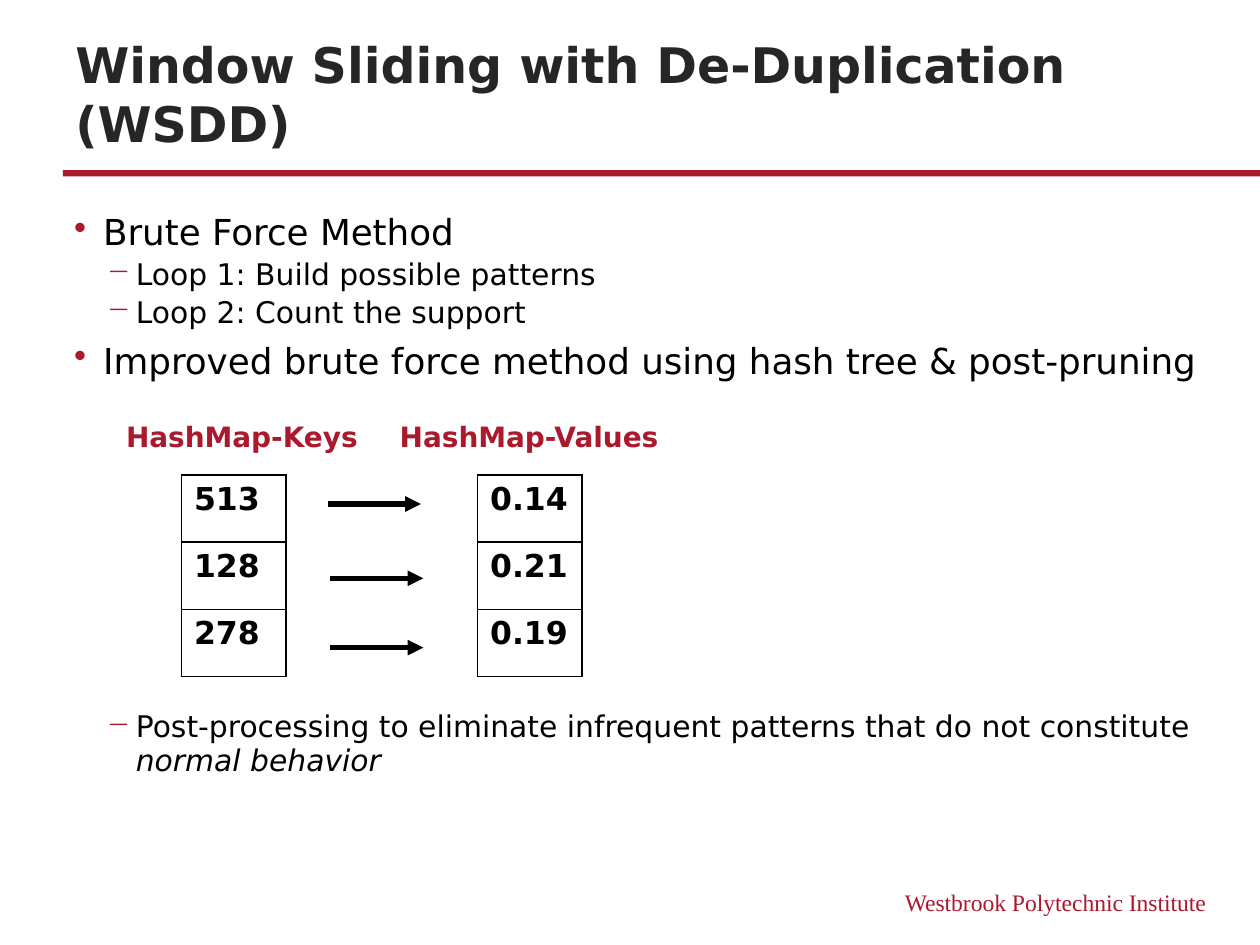
from dataclasses import dataclass

from lxml import etree
from pptx import Presentation
from pptx.dml.color import RGBColor
from pptx.enum import shapes, text
from pptx.oxml.ns import qn
from pptx.util import Inches, Pt

COLORS = {"red": "AB192D", "title": "262626", "black": "000000"}
SANS, SERIF = "DejaVu Sans", "Times New Roman"
ROW_H = 1.6 / 3


@dataclass
class Bullet:
    words: str
    level: int = 0
    spacing: float = 0.85
    italic_end: str = ""


@dataclass
class Column:
    heading: str
    heading_x: float
    table_x: float
    values: tuple[str, ...]


@dataclass
class Arrow:
    x: float
    y: float


BULLETS = [
    Bullet("Brute Force Method"),
    Bullet("Loop 1: Build possible patterns", 1),
    Bullet("Loop 2: Count the support", 1),
    Bullet("Improved brute force method using hash tree & post-pruning"),
]
CLOSING = [
    Bullet("Post-processing to eliminate infrequent patterns that do not constitute ",
           1, 0.95, "normal behavior"),
]
COLUMNS = [
    Column("HashMap-Keys", 0.78, 1.44, ("513", "128", "278")),
    Column("HashMap-Values", 3.06, 3.79, ("0.14", "0.21", "0.19")),
]
ARROWS = [Arrow(2.6, 4), Arrow(2.62, 4.59), Arrow(2.62, 5.14)]


def rgb(name: str) -> RGBColor:
    return RGBColor.from_string(COLORS[name])


def sub(parent, tag: str, **attrs: str):
    return etree.SubElement(parent, qn(tag), attrs)


def style(p, size: float, color: str = "black", bold: bool = False, font: str = SANS) -> None:
    p.font.size, p.font.bold, p.font.name = Pt(size), bold, font
    p.font.color.rgb = rgb(color)


def add_box(s, x: float, y: float, w: float, h: float):
    tf = s.shapes.add_textbox(Inches(x), Inches(y), Inches(w), Inches(h)).text_frame
    tf.word_wrap = True
    return tf


def add_line_of_text(s, box: tuple, words: str, size: float, color: str, align,
                     bold: bool = True, font: str = SANS):
    tf = add_box(s, *box)
    p = tf.paragraphs[0]
    p.text, p.alignment = words, align
    style(p, size, color, bold, font)
    return tf


def add_bullets(s, y: float, h: float, bullets: list[Bullet]) -> None:
    tf = add_box(s, 0.49, y, 9.16, h)
    for i, b in enumerate(bullets):
        p = tf.add_paragraph() if i else tf.paragraphs[0]
        p.level, p.line_spacing = b.level, b.spacing
        p.space_before = Pt(4.5 if b.level else 9)
        p.add_run().text = b.words
        if b.italic_end:
            r = p.add_run()
            r.text, r.font.italic = b.italic_end, True
        # Hanging indent and red bullet
        pPr = p._p.get_or_add_pPr()
        pPr.set("marL", str(Inches(0.49 if b.level else 0.23)))
        pPr.set("indent", str(Inches(-0.23)))
        sub(sub(pPr, "a:buClr"), "a:srgbClr", val=COLORS["red"])
        sub(pPr, "a:buChar", char="─" if b.level else "•")
        style(p, 17 if b.level else 20.4)


def add_column(s, col: Column) -> None:
    add_line_of_text(s, (col.heading_x, 3.28, 2.28, 0.7), col.heading, 16, "red",
                     text.PP_ALIGN.CENTER)
    tbl = s.shapes.add_table(len(col.values), 1, Inches(col.table_x), Inches(3.77),
                             Inches(0.83), Inches(ROW_H * len(col.values))).table
    tbl.first_row = tbl.horz_banding = False
    for i, value in enumerate(col.values):
        cell = tbl.cell(i, 0)
        cell.text = value
        style(cell.text_frame.paragraphs[0], 18, bold=True)
        tcPr = cell._tc.get_or_add_tcPr()
        for side in ("a:lnL", "a:lnR", "a:lnT", "a:lnB"):
            ln = sub(tcPr, side, w=str(Pt(1)))
            sub(sub(ln, "a:solidFill"), "a:srgbClr", val=COLORS["black"])
        cell.fill.background()


def add_arrow(s, a: Arrow) -> None:
    c = s.shapes.add_connector(shapes.MSO_CONNECTOR.STRAIGHT, Inches(a.x), Inches(a.y),
                               Inches(a.x + 0.74), Inches(a.y))
    c.line.width = Pt(3)
    c.line.color.rgb = rgb("black")
    sub(c.line._get_or_add_ln(), "a:tailEnd", type="triangle")
    sub(c._element.spPr, "a:effectLst")


def main() -> None:
    prs = Presentation()
    prs.slide_width, prs.slide_height = Inches(10), Inches(7.5)
    s = prs.slides.add_slide(prs.slide_layouts[6])

    # Rule under the title
    sp = s.shapes.add_shape(shapes.MSO_SHAPE.RECTANGLE, Inches(0.5), Inches(1.35),
                            Inches(9.5), Inches(0.05))
    sp.shadow.inherit = False
    sp.fill.solid()
    sp.fill.fore_color.rgb = rgb("red")
    sp.line.fill.background()

    # Footer and title
    add_line_of_text(s, (6, 7, 3.67, 0.33), "Westbrook Polytechnic Institute", 13.5, "red",
                     text.PP_ALIGN.RIGHT, bold=False, font=SERIF)
    title = add_line_of_text(s, (0.5, 0.38, 9, 0.88), "Window Sliding with De-Duplication (WSDD)",
                             28, "title", text.PP_ALIGN.LEFT)
    title.vertical_anchor = text.MSO_ANCHOR.BOTTOM

    # Bullets above and below the hash map
    add_bullets(s, 1.67, 1.65, BULLETS)
    add_bullets(s, 5.59, 1.2, CLOSING)

    # Hash map: keys, arrows, values
    for col in COLUMNS:
        add_column(s, col)
    for arrow in ARROWS:
        add_arrow(s, arrow)

    prs.save("out.pptx")


if __name__ == "__main__":
    main()
